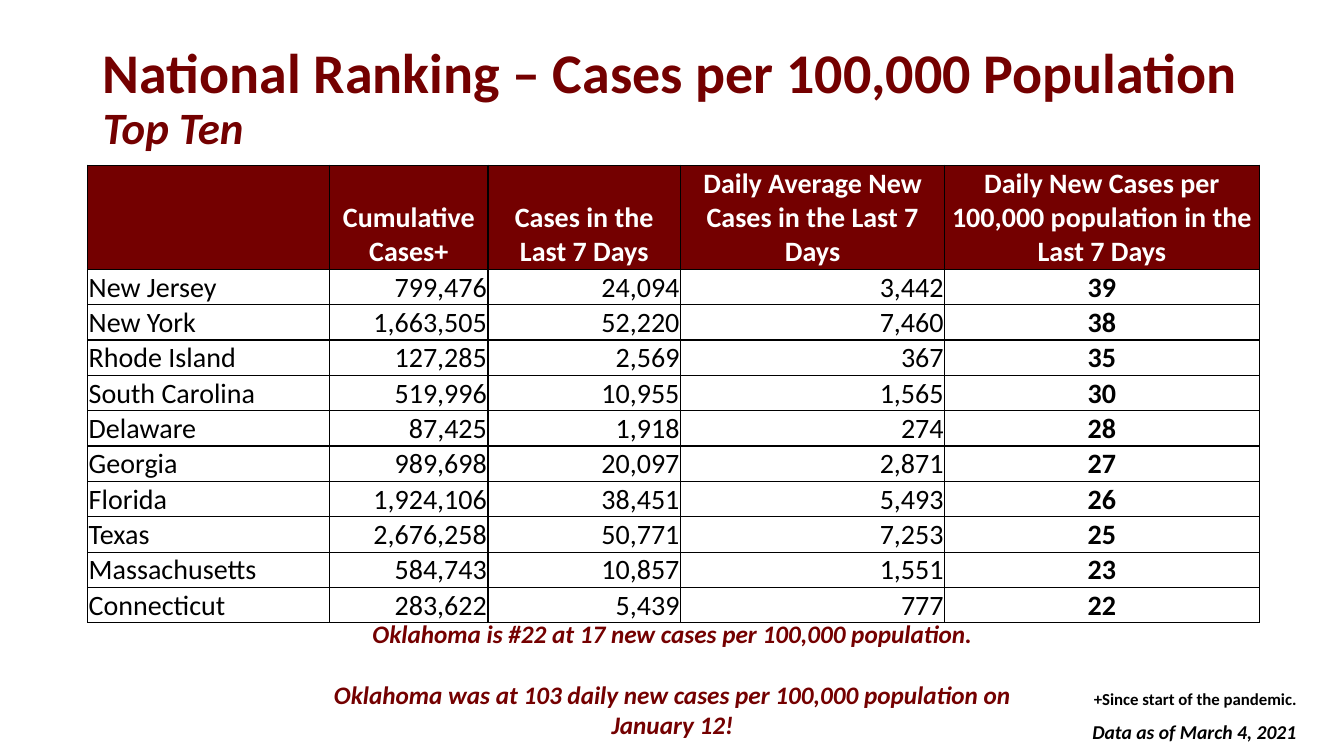
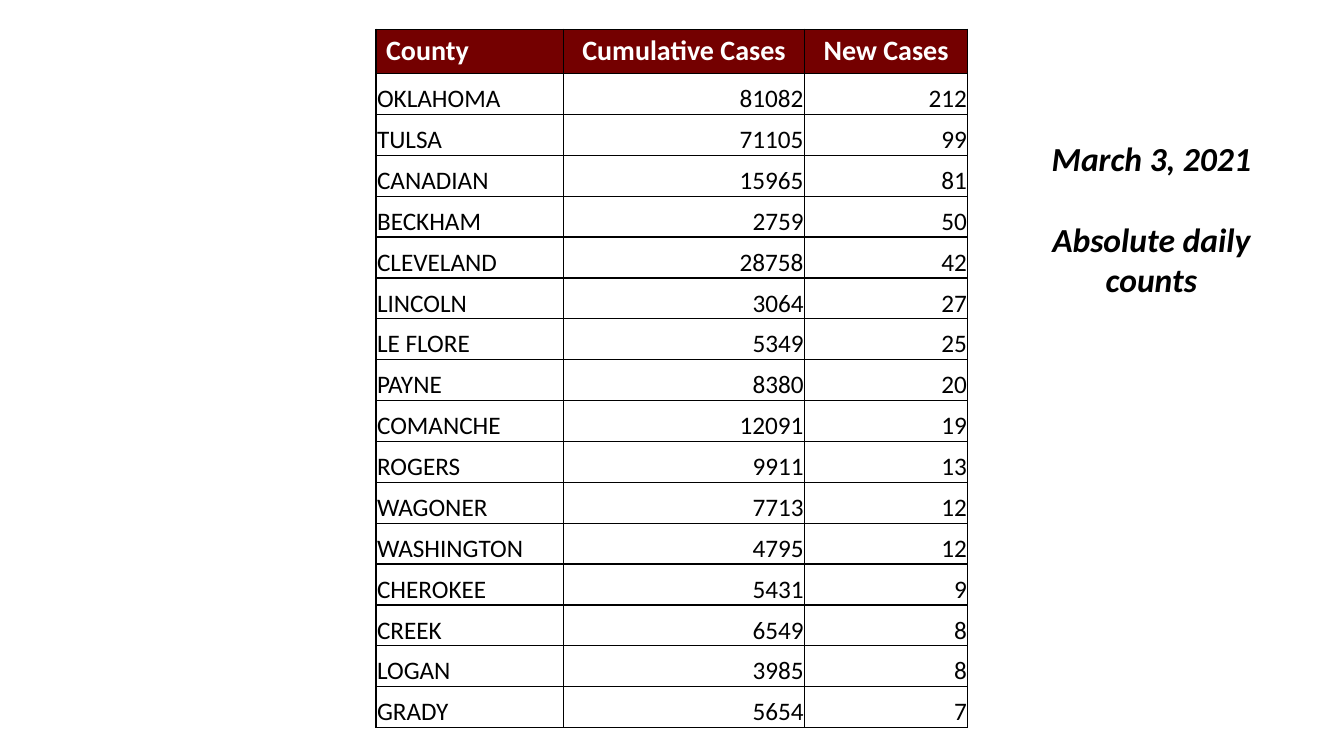
"""Build two slides of case counts: a national ranking and a county table."""
from copy import deepcopy
from dataclasses import dataclass

from lxml import etree
from pptx import Presentation
from pptx import util as u
from pptx.dml.color import RGBColor
from pptx.enum import text as t
from pptx.oxml import ns

COLORS = {"maroon": "740000", "black": "000000", "white": "FFFFFF"}
FONT = "Calibri"
LEFT, CENTER, RIGHT = t.PP_ALIGN.LEFT, t.PP_ALIGN.CENTER, t.PP_ALIGN.RIGHT
HEADER_SIZE = 20


@dataclass(frozen=True)
class Style:
    size: int
    color: str = "black"
    bold: bool = True
    italic: bool = False


@dataclass(frozen=True)
class Column:
    heading: str
    width: float
    heading_align: t.PP_ALIGN = CENTER
    align: t.PP_ALIGN = RIGHT
    bold: bool = False


@dataclass(frozen=True)
class TableLayout:
    left: float
    top: float
    height: float
    header_height: float
    body_size: int
    compact_header: bool


@dataclass(frozen=True)
class Note:
    left: float
    top: float
    width: float
    height: float
    lines: tuple[str, ...]
    style: Style
    align: t.PP_ALIGN = CENTER
    gap: int = 0


RANKING_COLUMNS = (
    Column("", 2.4, align=LEFT),
    Column("Cumulative Cases+", 1.57),
    Column("Cases in the Last 7 Days", 1.91),
    Column("Daily Average New Cases in the Last 7 Days", 2.62),
    Column("Daily New Cases per 100,000 population in the Last 7 Days", 3.12,
           align=CENTER, bold=True),
)
RANKING_ROWS = (
    ("New Jersey", "799,476", "24,094", "3,442", "39"),
    ("New York", "1,663,505", "52,220", "7,460", "38"),
    ("Rhode Island", "127,285", "2,569", "367", "35"),
    ("South Carolina", "519,996", "10,955", "1,565", "30"),
    ("Delaware", "87,425", "1,918", "274", "28"),
    ("Georgia", "989,698", "20,097", "2,871", "27"),
    ("Florida", "1,924,106", "38,451", "5,493", "26"),
    ("Texas", "2,676,258", "50,771", "7,253", "25"),
    ("Massachusetts", "584,743", "10,857", "1,551", "23"),
    ("Connecticut", "283,622", "5,439", "777", "22"),
)
RANKING_LAYOUT = TableLayout(0.87, 1.64, 4.54, 1.03, 20, True)
RANKING_NOTES = (
    Note(10.75, 6.78, 2.38, 0.3, ("+Since start of the pandemic.",), Style(12), LEFT),
    Note(9.85, 7.09, 3.11, 0.34, ("Data as of March 4, 2021",),
         Style(14, italic=True), RIGHT),
    Note(2.81, 6.08, 7.72, 1.31,
         ("Oklahoma is #22 at 17 new cases per 100,000 population.",
          "Oklahoma was at 103 daily new cases per 100,000 population on January 12!"),
         Style(18, "maroon", italic=True), gap=22),
)

COUNTY_COLUMNS = (
    Column("County", 1.86, LEFT, LEFT),
    Column("Cumulative Cases", 2.39),
    Column("New Cases", 1.62),
)
COUNTY_ROWS = (
    ("OKLAHOMA", "81082", "212"),
    ("TULSA", "71105", "99"),
    ("CANADIAN", "15965", "81"),
    ("BECKHAM", "2759", "50"),
    ("CLEVELAND", "28758", "42"),
    ("LINCOLN", "3064", "27"),
    ("LE FLORE", "5349", "25"),
    ("PAYNE", "8380", "20"),
    ("COMANCHE", "12091", "19"),
    ("ROGERS", "9911", "13"),
    ("WAGONER", "7713", "12"),
    ("WASHINGTON", "4795", "12"),
    ("CHEROKEE", "5431", "9"),
    ("CREEK", "6549", "8"),
    ("LOGAN", "3985", "8"),
    ("GRADY", "5654", "7"),
)
COUNTY_LAYOUT = TableLayout(3.73, 0.29, 6.93, 0.44, 18, False)
COUNTY_NOTE = Note(9.95, 1.32, 2.94, 1.72, ("March 3, 2021", "Absolute daily counts"),
                   Style(24, italic=True), gap=29)


def add_run(paragraph, words: str, style: Style):
    run = paragraph.add_run()
    run.text = words
    run.font.name = FONT
    run.font.size = u.Pt(style.size)
    run.font.bold = style.bold
    run.font.italic = style.italic
    run.font.color.rgb = RGBColor.from_string(COLORS[style.color])
    return run


def add_borders(cell) -> None:
    properties = cell._tc.get_or_add_tcPr()
    for side in ("lnL", "lnR", "lnT", "lnB"):
        line = etree.SubElement(properties, ns.qn(f"a:{side}"), w=str(u.Pt(1)))
        fill = etree.SubElement(line, ns.qn("a:solidFill"))
        etree.SubElement(fill, ns.qn("a:srgbClr"), val=COLORS["black"])


def fill_cell(cell, words: str, style: Style, align: t.PP_ALIGN,
              header: bool, compact: bool) -> None:
    add_borders(cell)
    if header:
        cell.fill.solid()
        cell.fill.fore_color.rgb = RGBColor.from_string(COLORS["maroon"])
    else:
        cell.fill.background()
    if compact:
        cell.vertical_anchor = t.MSO_ANCHOR.BOTTOM
        cell.margin_left = cell.margin_right = cell.margin_top = u.Inches(0.01)
        cell.margin_bottom = u.Inches(0)
    paragraph = cell.text_frame.paragraphs[0]
    paragraph.alignment = align
    if words:
        add_run(paragraph, words, style)


def add_case_table(slide, layout: TableLayout, columns: tuple[Column, ...],
                   rows: tuple[tuple[str, ...], ...]) -> None:
    table = slide.shapes.add_table(
        len(rows) + 1, len(columns), u.Inches(layout.left), u.Inches(layout.top),
        u.Inches(sum(column.width for column in columns)),
        u.Inches(layout.height)).table
    table.first_row = table.horz_banding = False
    body_height = (layout.height - layout.header_height) / len(rows)
    for index, row in enumerate(table.rows):
        row.height = u.Inches(body_height if index else layout.header_height)
    for index, column in enumerate(columns):
        table.columns[index].width = u.Inches(column.width)
        fill_cell(table.cell(0, index), column.heading, Style(HEADER_SIZE, "white"),
                  column.heading_align, True, layout.compact_header)
        body_style = Style(layout.body_size, bold=column.bold)
        for number, values in enumerate(rows, 1):
            fill_cell(table.cell(number, index), values[index], body_style,
                      column.align, False, True)


def add_note(slide, note: Note) -> None:
    shape = slide.shapes.add_textbox(u.Inches(note.left), u.Inches(note.top),
                                     u.Inches(note.width), u.Inches(note.height))
    frame = shape.text_frame
    frame.word_wrap = True
    frame.auto_size = t.MSO_AUTO_SIZE.SHAPE_TO_FIT_TEXT
    for index, line in enumerate(note.lines):
        paragraph = frame.add_paragraph() if index else frame.paragraphs[0]
        paragraph.alignment = note.align
        if index:
            paragraph.space_before = u.Pt(note.gap)
        add_run(paragraph, line, note.style)


def set_title(slide, heading: str, subheading: str) -> None:
    title = slide.shapes.title
    title.left, title.top = u.Inches(0.92), u.Inches(0.26)
    title.width, title.height = u.Inches(11.5), u.Inches(1.45)
    frame = title.text_frame
    frame.word_wrap = True
    frame.auto_size = t.MSO_AUTO_SIZE.NONE
    frame.vertical_anchor = t.MSO_ANCHOR.MIDDLE
    paragraph = frame.paragraphs[0]
    paragraph.alignment = LEFT
    paragraph.line_spacing = 0.9
    run = add_run(paragraph, heading, Style(40, "maroon"))
    paragraph.add_line_break()
    paragraph._p[-1].append(deepcopy(run._r.rPr))
    add_run(paragraph, subheading, Style(32, "maroon", italic=True))


def main() -> None:
    presentation = Presentation()
    presentation.slide_width = u.Inches(13.33)
    presentation.slide_height = u.Inches(7.5)
    title_only, blank = presentation.slide_layouts[5], presentation.slide_layouts[6]

    ranking = presentation.slides.add_slide(title_only)
    set_title(ranking, "National Ranking – Cases per 100,000 Population", "Top Ten")
    add_case_table(ranking, RANKING_LAYOUT, RANKING_COLUMNS, RANKING_ROWS)
    for note in RANKING_NOTES:
        add_note(ranking, note)

    counties = presentation.slides.add_slide(blank)
    add_case_table(counties, COUNTY_LAYOUT, COUNTY_COLUMNS, COUNTY_ROWS)
    add_note(counties, COUNTY_NOTE)

    presentation.save("out.pptx")


if __name__ == "__main__":
    main()
